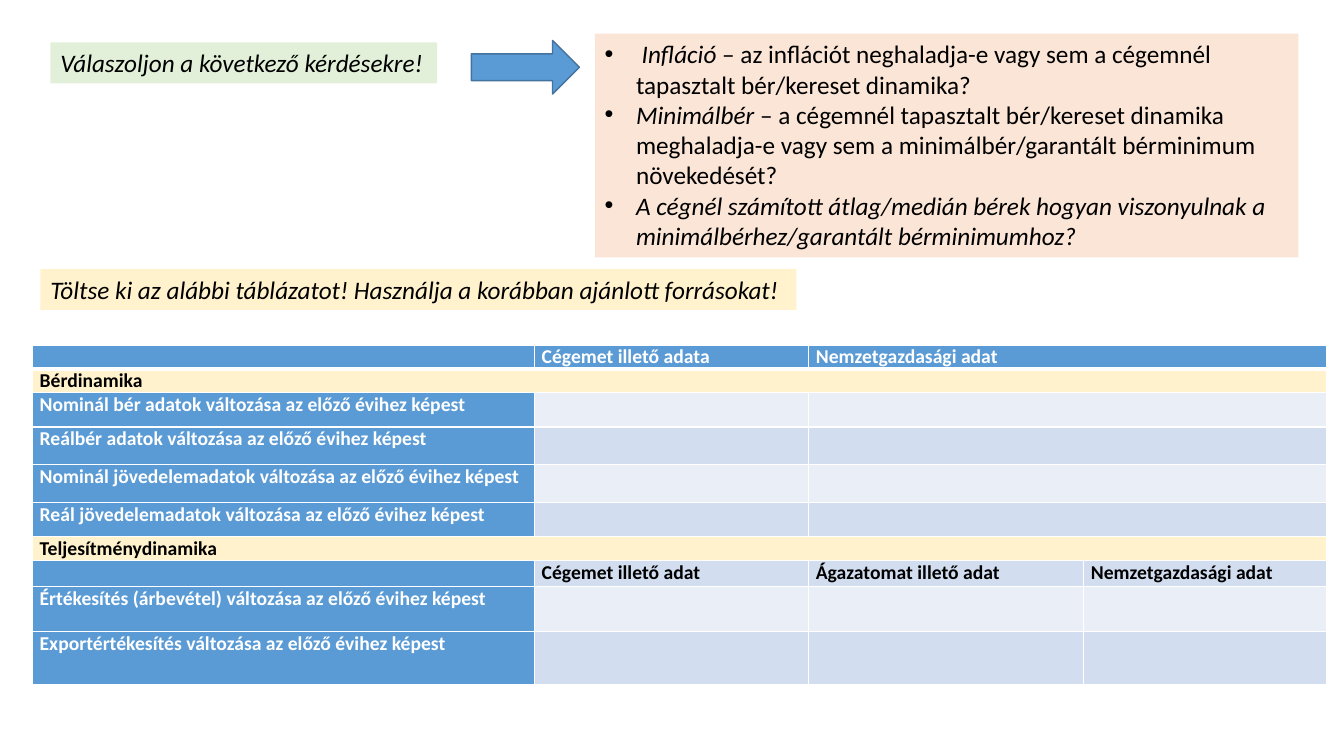
from dataclasses import dataclass

import lxml.etree
import pptx
import pptx.dml.color
import pptx.enum.shapes
import pptx.enum.text
import pptx.oxml.ns
import pptx.util
from pptx.util import Cm

ANSWER_PROMPT = "Válaszoljon a következő kérdésekre!"
TABLE_PROMPT = "Töltse ki az alábbi táblázatot! Használja a korábban ajánlott forrásokat!"

# Each question: italic lead, upright continuation
QUESTIONS = [
    (" Infláció ", "– az inflációt neghaladja-e vagy sem a cégemnél tapasztalt bér/kereset dinamika?"),
    ("Minimálbér ", "– a cégemnél tapasztalt bér/kereset dinamika meghaladja-e vagy sem "
                    "a minimálbér/garantált bérminimum növekedését?"),
    ("A cégnél számított átlag/medián bérek hogyan viszonyulnak a "
     "minimálbérhez/garantált bérminimumhoz?", ""),
]

# Each row: kind, height in cm, texts from the left
ROWS = [
    ("header", 0.6, ["", "Cégemet illető adata", "Nemzetgazdasági adat"]),
    ("section", 0.6, ["Bérdinamika"]),
    ("light", 0.86, ["Nominál bér adatok változása az előző évihez képest", "", ""]),
    ("dark", 0.95, ["Reálbér adatok változása az előző évihez képest", "", ""]),
    ("light", 0.95, ["Nominál jövedelemadatok változása az előző évihez képest", "", ""]),
    ("dark", 0.86, ["Reál jövedelemadatok változása az előző évihez képest", "", ""]),
    ("section", 0.6, ["Teljesítménydinamika"]),
    ("dark", 0.66, ["", "Cégemet illető adat", "Ágazatomat illető adat", "Nemzetgazdasági adat"]),
    ("light", 1.14, ["Értékesítés (árbevétel) változása az előző évihez képest", "", "", ""]),
    ("dark", 1.32, ["Exportértékesítés változása az előző évihez képest", "", "", ""]),
]
COLUMN_WIDTHS = [12.65, 6.91, 6.93, 6.12]


@dataclass(frozen=True)
class Theme:
    font: str = "Calibri"
    body_size: int = 18
    table_size: int = 14
    black: str = "000000"
    white: str = "FFFFFF"
    blue: str = "5B9BD5"
    outline: str = "43739E"
    peach: str = "FBE5D6"
    yellow: str = "FFF2CC"
    green: str = "E2F0D9"
    light_band: str = "EAEFF7"
    dark_band: str = "D2DEEF"


THEME = Theme()
ROW_FILLS = {"header": THEME.blue, "section": THEME.yellow,
             "light": THEME.light_band, "dark": THEME.dark_band}


def rgb(value):
    return pptx.dml.color.RGBColor.from_string(value)


def paint(target, color):
    target.fill.solid()
    target.fill.fore_color.rgb = rgb(color)


def format_run(run, size, color, bold=False, italic=False):
    run.font.name = THEME.font
    run.font.size = pptx.util.Pt(size)
    run.font.color.rgb = rgb(color)
    run.font.bold = bold
    run.font.italic = italic


def add_panel(slide, left, top, width, height, color, wrap):
    panel = slide.shapes.add_textbox(Cm(left), Cm(top), Cm(width), Cm(height))
    paint(panel, color)
    panel.text_frame.word_wrap = wrap
    panel.text_frame.auto_size = pptx.enum.text.MSO_AUTO_SIZE.SHAPE_TO_FIT_TEXT
    return panel.text_frame


def add_prompt(slide, text, left, top, width, color):
    frame = add_panel(slide, left, top, width, 1.03, color, False)
    frame.text = text
    format_run(frame.paragraphs[0].runs[0], THEME.body_size, THEME.black, italic=True)


def add_bullet(paragraph):
    properties = paragraph._p.get_or_add_pPr()
    properties.set("marL", str(Cm(0.79)))
    properties.set("indent", str(-Cm(0.79)))
    for tag, attributes in (("a:buFont", {"typeface": "Arial"}), ("a:buChar", {"char": "•"})):
        lxml.etree.SubElement(properties, pptx.oxml.ns.qn(tag), attributes)


def add_questions(slide):
    frame = add_panel(slide, 14.99, 0.85, 17.73, 5.64, THEME.peach, True)
    for index, (lead, continuation) in enumerate(QUESTIONS):
        paragraph = frame.add_paragraph() if index else frame.paragraphs[0]
        add_bullet(paragraph)
        for text, italic in ((lead, True), (continuation, False)):
            if text:
                run = paragraph.add_run()
                run.text = text
                format_run(run, THEME.body_size, THEME.black, italic=italic)


def add_arrow(slide):
    arrow = slide.shapes.add_shape(pptx.enum.shapes.MSO_SHAPE.RIGHT_ARROW,
                                   Cm(11.88), Cm(1.02), Cm(2.72), Cm(1.35))
    arrow.shadow.inherit = False
    paint(arrow, THEME.blue)
    arrow.line.color.rgb = rgb(THEME.outline)
    arrow.line.width = pptx.util.Pt(1)


def add_borders(cell, bottom_width):
    properties = cell._tc.get_or_add_tcPr()
    for side, width in (("L", 1), ("R", 1), ("T", 1), ("B", bottom_width)):
        line = lxml.etree.SubElement(properties, pptx.oxml.ns.qn("a:ln" + side),
                                     {"w": str(pptx.util.Pt(width))})
        fill = lxml.etree.SubElement(line, pptx.oxml.ns.qn("a:solidFill"))
        lxml.etree.SubElement(fill, pptx.oxml.ns.qn("a:srgbClr"), {"val": THEME.white})


def fill_cell(cell, text, kind, is_label):
    """Set borders, fill and text; an empty cell keeps the table's type size."""
    add_borders(cell, 3 if kind == "header" else 1)
    on_blue = kind == "header" or (is_label and kind != "section")
    paint(cell, THEME.blue if on_blue else ROW_FILLS[kind])
    cell.margin_left = cell.margin_right = Cm(0.18)
    cell.margin_top = cell.margin_bottom = 0
    cell.text = text
    paragraph = cell.text_frame.paragraphs[0]
    for run in paragraph.runs:
        format_run(run, THEME.table_size, THEME.white if on_blue else THEME.black, bold=True)
    if not text:
        lxml.etree.SubElement(paragraph._p, pptx.oxml.ns.qn("a:endParaRPr"),
                              {"sz": str(THEME.table_size * 100)})


def add_data_table(slide):
    column_count = len(COLUMN_WIDTHS)
    total_height = sum(height for _, height, _ in ROWS)
    table = slide.shapes.add_table(len(ROWS), column_count, Cm(0.82), Cm(8.7),
                                   Cm(sum(COLUMN_WIDTHS)), Cm(total_height)).table
    for column, width in zip(table.columns, COLUMN_WIDTHS):
        column.width = Cm(width)
    for row_index, (kind, height, texts) in enumerate(ROWS):
        table.rows[row_index].height = Cm(height)
        padded = texts + [""] * (column_count - len(texts))
        for column_index, text in enumerate(padded):
            fill_cell(table.cell(row_index, column_index), text, kind, column_index == 0)
        if len(texts) < column_count:
            last_own_cell = table.cell(row_index, len(texts) - 1)
            last_own_cell.merge(table.cell(row_index, column_count - 1))


def main():
    presentation = pptx.Presentation()
    presentation.slide_width, presentation.slide_height = Cm(33.87), Cm(19.05)
    slide = presentation.slides.add_slide(presentation.slide_layouts[6])
    add_questions(slide)
    add_prompt(slide, TABLE_PROMPT, 1.02, 6.78, 19.05, THEME.yellow)
    add_prompt(slide, ANSWER_PROMPT, 1.27, 1.07, 9.75, THEME.green)
    add_arrow(slide)
    add_data_table(slide)
    presentation.save("out.pptx")


if __name__ == "__main__":
    main()
